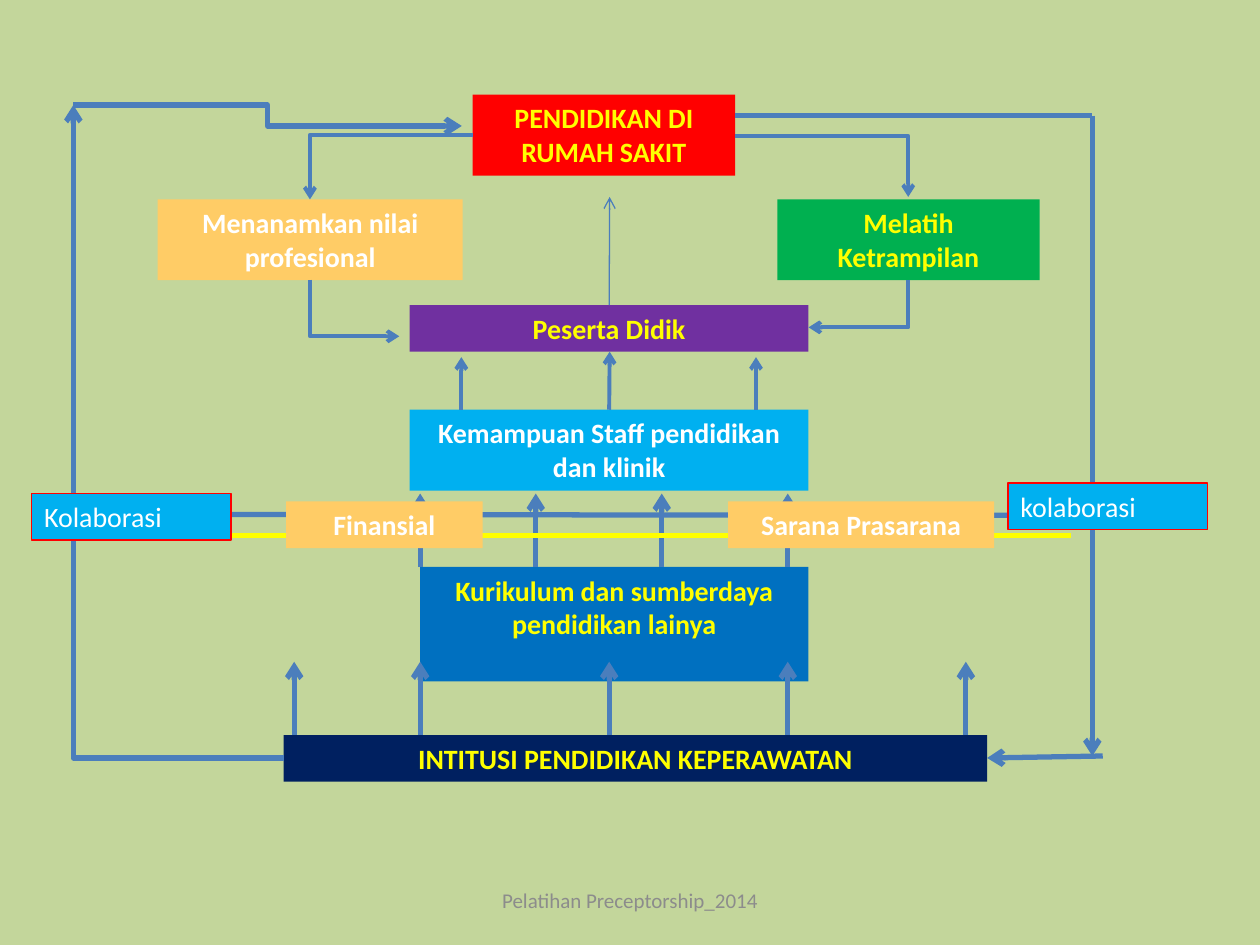
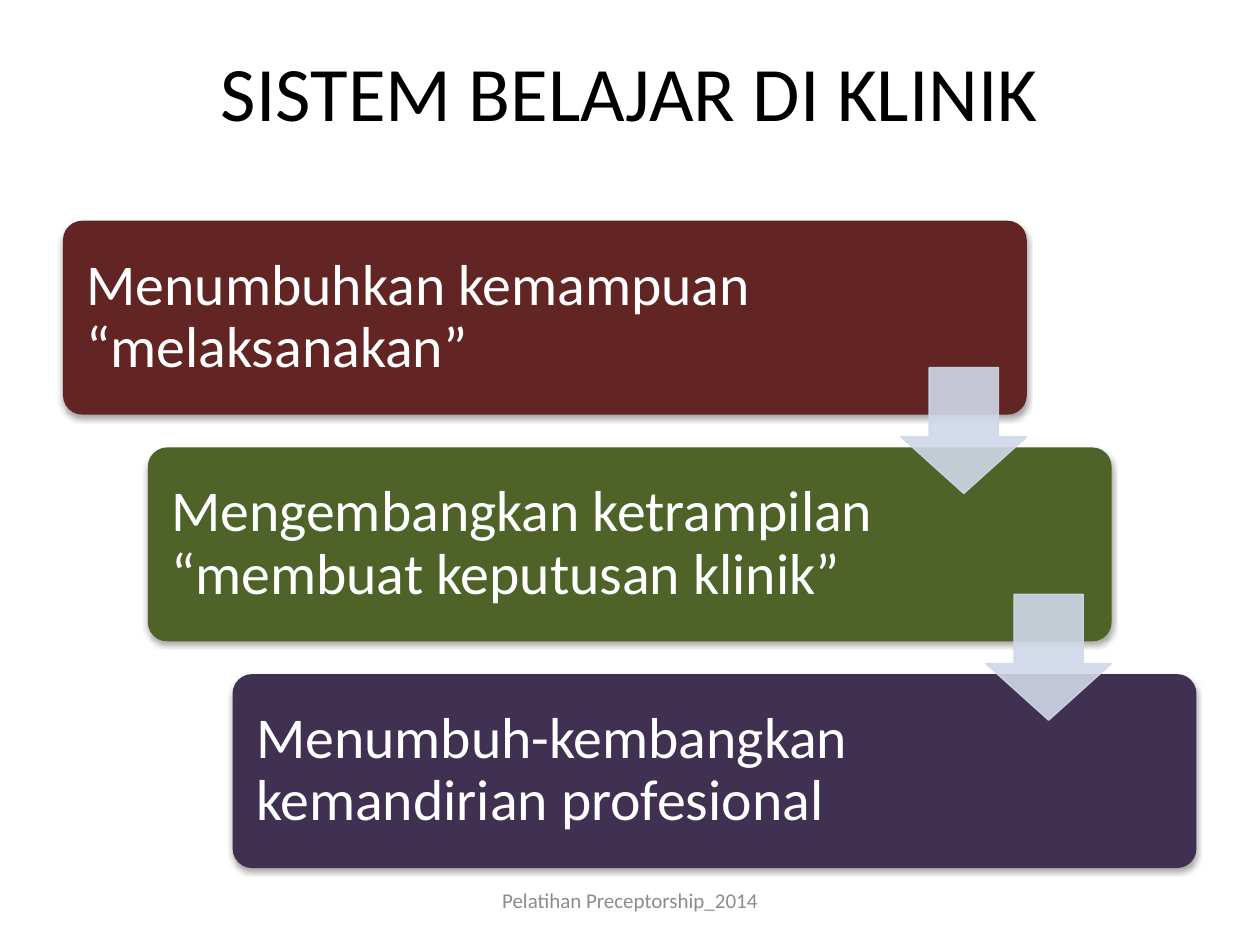
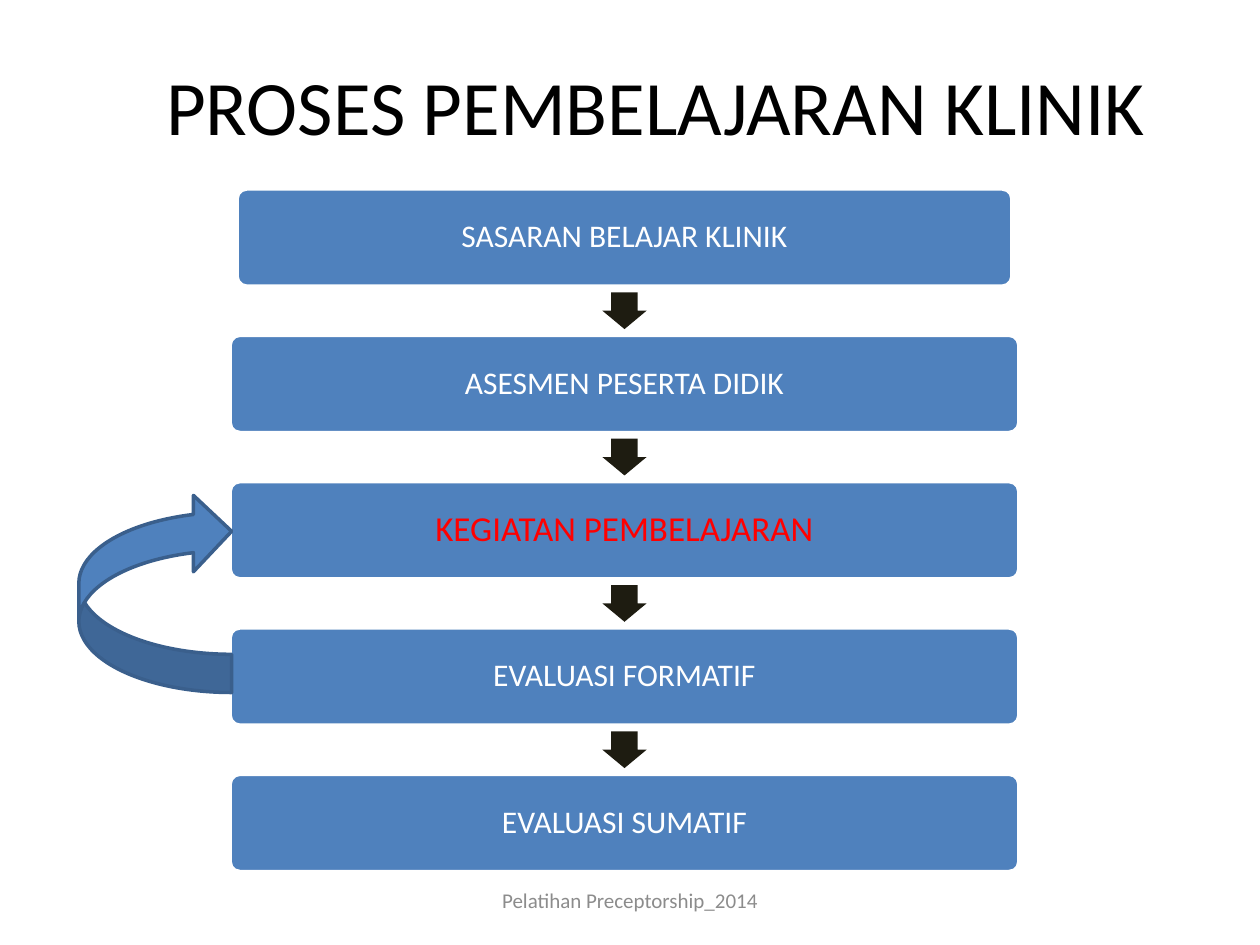
from lxml import etree
from pptx import Presentation
from pptx.dml.color import RGBColor
from pptx.enum.shapes import MSO_CONNECTOR as Connector, MSO_SHAPE as Shape
from pptx.enum.text import MSO_ANCHOR as Anchor, PP_ALIGN as Align
from pptx.oxml.ns import qn
from pptx.util import Cm, Pt

FONT = "Calibri"
FOOTER = "Pelatihan Preceptorship_2014"

WHITE = RGBColor(0xFF, 0xFF, 0xFF)
BLACK = RGBColor(0x00, 0x00, 0x00)
GREY = RGBColor(0x8C, 0x8C, 0x8C)
YELLOW = RGBColor(0xFF, 0xFF, 0x00)
RED = RGBColor(0xFF, 0x00, 0x00)
GREEN = RGBColor(0x00, 0xB0, 0x50)
ORANGE = RGBColor(0xFF, 0xCC, 0x66)
PURPLE = RGBColor(0x70, 0x30, 0xA0)
SKY = RGBColor(0x00, 0xB0, 0xF0)
BLUE = RGBColor(0x00, 0x70, 0xC0)
NAVY = RGBColor(0x00, 0x20, 0x60)
SAGE = RGBColor(0xC3, 0xD6, 0x9B)
LINE_BLUE = RGBColor(0x4B, 0x7E, 0xBC)
MAROON = RGBColor(0x63, 0x25, 0x23)
OLIVE = RGBColor(0x4F, 0x62, 0x28)
PLUM = RGBColor(0x40, 0x31, 0x52)
PALE_BLUE = RGBColor(0xD0, 0xD8, 0xE8)
STEP_BLUE = RGBColor(0x4F, 0x81, 0xBD)
LOOP_EDGE = RGBColor(0x3A, 0x5F, 0x8C)
DARK_BROWN = RGBColor(0x1E, 0x1C, 0x11)

# All places are in centimetres.
# Text, (left, top, width, height), fill, text colour
MAIN_BOXES = [
    ("PENDIDIKAN DI RUMAH SAKIT", (9.53, 1.91, 5.29, 1.63), RED, YELLOW),
    ("Melatih Ketrampilan", (15.67, 4.02, 5.29, 1.63), GREEN, YELLOW),
    ("Menanamkan nilai profesional", (3.18, 4.02, 6.15, 1.63), ORANGE, WHITE),
    ("Peserta Didik", (8.26, 6.15, 8.04, 0.94), PURPLE, YELLOW),
    ("Kemampuan Staff pendidikan dan klinik", (8.26, 8.26, 8.04, 1.63), SKY, WHITE),
    ("Kurikulum dan sumberdaya pendidikan lainya", (8.47, 11.43, 7.83, 2.31), BLUE, YELLOW),
    ("INTITUSI PENDIDIKAN KEPERAWATAN", (5.72, 14.82, 14.18, 0.94), NAVY, YELLOW),
]
COLLABORATION_BOXES = [
    ("kolaborasi", (20.32, 9.74, 4.02, 0.94)),
    ("Kolaborasi", (0.64, 9.95, 4.02, 0.94)),
]
RESOURCE_BOXES = [
    ("Sarana Prasarana", (14.68, 10.11, 5.36, 0.94), ORANGE, WHITE),
    ("Finansial", (5.77, 10.11, 3.96, 0.94), ORANGE, WHITE),
]
# Route, start, end, line width
ARROWS = [
    ("across", (9.53, 2.72), (6.25, 4.02), 2.25),
    ("across", (14.82, 2.74), (18.31, 3.97), 2.25),
    ("down", (6.25, 5.64), (8.05, 6.78), 2.25),
    ("down", (18.31, 5.64), (16.3, 6.6), 2.25),
    ("straight", (12.28, 8.26), (12.29, 7.09), 2.25),
    ("across", (5.72, 15.28), (1.48, 2.12), 3),
    ("step", (1.48, 2.12), (9.31, 2.54), 3),
    ("straight", (22.02, 2.33), (22.02, 15.24), 3),
    ("straight", (22.23, 15.24), (19.9, 15.28), 3),
    ("straight", (12.28, 6.15), (12.29, 3.97), 0.75),
]
# Centres, bottom, top, line width
ARROW_ROWS = [
    ((9.3, 15.24), 8.26, 7.2, 2.25),
    ((8.47, 10.8, 13.34, 15.88), 11.43, 9.95, 3),
    ((5.93, 8.47, 12.28, 15.88, 19.47), 14.82, 13.34, 3),
]
PLAIN_LINES = [
    ((2.12, 10.37), (21.59, 10.39), LINE_BLUE),
    ((2.12, 10.8), (21.59, 10.8), YELLOW),
    ((14.82, 2.33), (22.02, 2.33), LINE_BLUE),
]

LEARNING_STAGES = [
    ("Menumbuhkan kemampuan “melaksanakan”", MAROON),
    ("Mengembangkan ketrampilan “membuat keputusan klinik”", OLIVE),
    ("Menumbuh-kembangkan kemandirian profesional", PLUM),
]

# Text, width, text size, text colour
PROCESS_STEPS = [
    ("SASARAN BELAJAR KLINIK", 15.62, 18, WHITE),
    ("ASESMEN PESERTA DIDIK", 15.9, 18, WHITE),
    ("KEGIATAN PEMBELAJARAN", 15.9, 20, RED),
    ("EVALUASI FORMATIF", 15.9, 18, WHITE),
    ("EVALUASI SUMATIF", 15.9, 18, WHITE),
]


def lengths(values):
    return [Cm(value) for value in values]


def write(frame, text, size, color, align=Align.CENTER, anchor=Anchor.TOP,
          bold=False, spacing=None):
    frame.word_wrap = True
    frame.vertical_anchor = anchor
    paragraph = frame.paragraphs[0]
    paragraph.alignment = align
    paragraph.line_spacing = spacing
    run = paragraph.add_run()
    run.text = text
    run.font.name = FONT
    run.font.size = Pt(size)
    run.font.bold = bold
    run.font.color.rgb = color


def set_insets(frame, left, top, right, bottom):
    frame.margin_left, frame.margin_top = Cm(left), Cm(top)
    frame.margin_right, frame.margin_bottom = Cm(right), Cm(bottom)


def add_block(slide, kind, place, fill, edge=None, edge_width=0.75, adjustments=()):
    shape = slide.shapes.add_shape(kind, *lengths(place))
    shape.shadow.inherit = False
    shape.fill.solid()
    shape.fill.fore_color.rgb = fill
    if edge is None:
        shape.line.fill.background()
    else:
        shape.line.color.rgb = edge
        shape.line.width = Pt(edge_width)
    for index, value in enumerate(adjustments):
        shape.adjustments[index] = value
    return shape


def set_alpha(color_element, percent):
    etree.SubElement(color_element, qn("a:alpha"), val=str(percent * 1000))


def add_soft_shadow(shape):
    effects = shape._element.spPr.find(qn("a:effectLst"))
    shadow = etree.SubElement(effects, qn("a:outerShdw"), blurRad=str(Pt(3.1)),
                              dist=str(Pt(1.8)), dir="5400000", rotWithShape="0")
    set_alpha(etree.SubElement(shadow, qn("a:srgbClr"), val=str(BLACK)), 35)


def add_line(slide, start, end, width, color=LINE_BLUE, route="straight", arrow=False):
    """Routes: straight, across (one bend, level first), down (one bend), step (two bends)."""
    if route == "down":
        # A quarter turn of the one-bend connector makes its first leg vertical.
        (x1, y1), (x2, y2) = start, end
        middle_x, middle_y = (x1 + x2) / 2, (y1 + y2) / 2
        half_drop, half_run = (y2 - y1) / 2, (x2 - x1) / 2
        start = middle_x - half_drop, middle_y + half_run
        end = middle_x + half_drop, middle_y - half_run
    kind = Connector.STRAIGHT if route == "straight" else Connector.ELBOW
    connector = slide.shapes.add_connector(kind, *lengths(start + end))
    connector.line.color.rgb = color
    connector.line.width = Pt(width)
    properties = connector._element.spPr
    if route in ("across", "down"):
        properties.find(qn("a:prstGeom")).set("prst", "bentConnector2")
    if route == "down":
        properties.find(qn("a:xfrm")).set("rot", "5400000")
    if arrow:
        etree.SubElement(properties.find(qn("a:ln")), qn("a:tailEnd"), type="arrow")
    etree.SubElement(properties, qn("a:effectLst"))


def add_slide(presentation, background, title=None, title_place=None):
    slide = presentation.slides.add_slide(presentation.slide_layouts[5 if title else 6])
    slide.background.fill.solid()
    slide.background.fill.fore_color.rgb = background
    if title:
        holder = slide.shapes.title
        holder.left, holder.top, holder.width, holder.height = lengths(title_place)
        write(holder.text_frame, title, 44, BLACK, anchor=Anchor.MIDDLE)
    return slide


def add_footer(slide):
    footer = slide.shapes.add_textbox(*lengths((8.68, 17.65, 8.04, 1.01)))
    write(footer.text_frame, FOOTER, 12, GREY, anchor=Anchor.MIDDLE)


def add_label_boxes(slide, boxes):
    for text, place, fill, color in boxes:
        box = add_block(slide, Shape.RECTANGLE, place, fill)
        write(box.text_frame, text, 16, color, bold=True)


def build_education_model(presentation):
    slide = add_slide(presentation, SAGE)
    add_label_boxes(slide, MAIN_BOXES)
    for route, start, end, width in ARROWS:
        add_line(slide, start, end, width, route=route, arrow=True)
    for centres, bottom, top, width in ARROW_ROWS:
        for x in centres:
            add_line(slide, (x, bottom), (x, top), width, arrow=True)
    for start, end, color in PLAIN_LINES:
        add_line(slide, start, end, 3, color)
    for text, place in COLLABORATION_BOXES:
        box = add_block(slide, Shape.RECTANGLE, place, SKY, RED)
        write(box.text_frame, text, 16, WHITE, Align.LEFT)
    add_label_boxes(slide, RESOURCE_BOXES)
    add_footer(slide)


def build_learning_system(presentation):
    slide = add_slide(presentation, WHITE, "SISTEM BELAJAR DI KLINIK",
                      (1.27, 0.23, 22.86, 3.18))
    left, top, width, height = 1.27, 4.45, 19.43, 3.91
    step_x, step_y, arrow_size = 1.71, 4.57, 2.54
    corners = [(left + i * step_x, top + i * step_y) for i in range(len(LEARNING_STAGES))]
    for (text, fill), (x, y) in zip(LEARNING_STAGES, corners):
        stage = add_block(slide, Shape.ROUNDED_RECTANGLE, (x, y, width, height), fill,
                          adjustments=[0.1])
        add_soft_shadow(stage)
        set_insets(stage.text_frame, 0.36, 0.36, 4.45, 0.36)
        write(stage.text_frame, text, 33, WHITE, Align.LEFT, Anchor.MIDDLE, spacing=0.9)
    for x, y in corners[:-1]:
        place = (x + width - arrow_size, y + 2.96, arrow_size, arrow_size)
        arrow = add_block(slide, Shape.DOWN_ARROW, place, PALE_BLUE, PALE_BLUE,
                          adjustments=[0.55, 0.45])
        for color in arrow._element.spPr.iter(qn("a:srgbClr")):
            set_alpha(color, 90)
    add_footer(slide)


def build_learning_process(presentation):
    slide = add_slide(presentation, WHITE, "PROSES PEMBELAJARAN KLINIK",
                      (2.33, 1.06, 21.8, 2.12))
    centre, top, height, pitch = 12.59, 3.81, 1.96, 2.95
    arrow_width, arrow_height = 0.89, 0.74
    for i, (text, width, size, color) in enumerate(PROCESS_STEPS):
        y = top + i * pitch
        step = add_block(slide, Shape.ROUNDED_RECTANGLE,
                         (centre - width / 2, y, width, height), STEP_BLUE, WHITE, 2, [0.1])
        set_insets(step.text_frame, 0.18, 0.18, 0.18, 0.18)
        write(step.text_frame, text, size, color, anchor=Anchor.MIDDLE, spacing=0.9)
        if i < len(PROCESS_STEPS) - 1:
            arrow_top = y + (height + pitch - arrow_height) / 2
            add_block(slide, Shape.DOWN_ARROW,
                      (centre - arrow_width / 2, arrow_top, arrow_width, arrow_height),
                      DARK_BROWN, adjustments=[0.6, 0.5])
    add_footer(slide)
    feedback_loop = add_block(slide, Shape.CURVED_DOWN_ARROW, (1.12, 10.41, 4.02, 3.08),
                              STEP_BLUE, LOOP_EDGE, 2)
    feedback_loop.rotation = 270


def main():
    presentation = Presentation()
    presentation.slide_width, presentation.slide_height = Cm(25.4), Cm(19.05)
    build_education_model(presentation)
    build_learning_system(presentation)
    build_learning_process(presentation)
    presentation.save("out.pptx")


if __name__ == "__main__":
    main()
